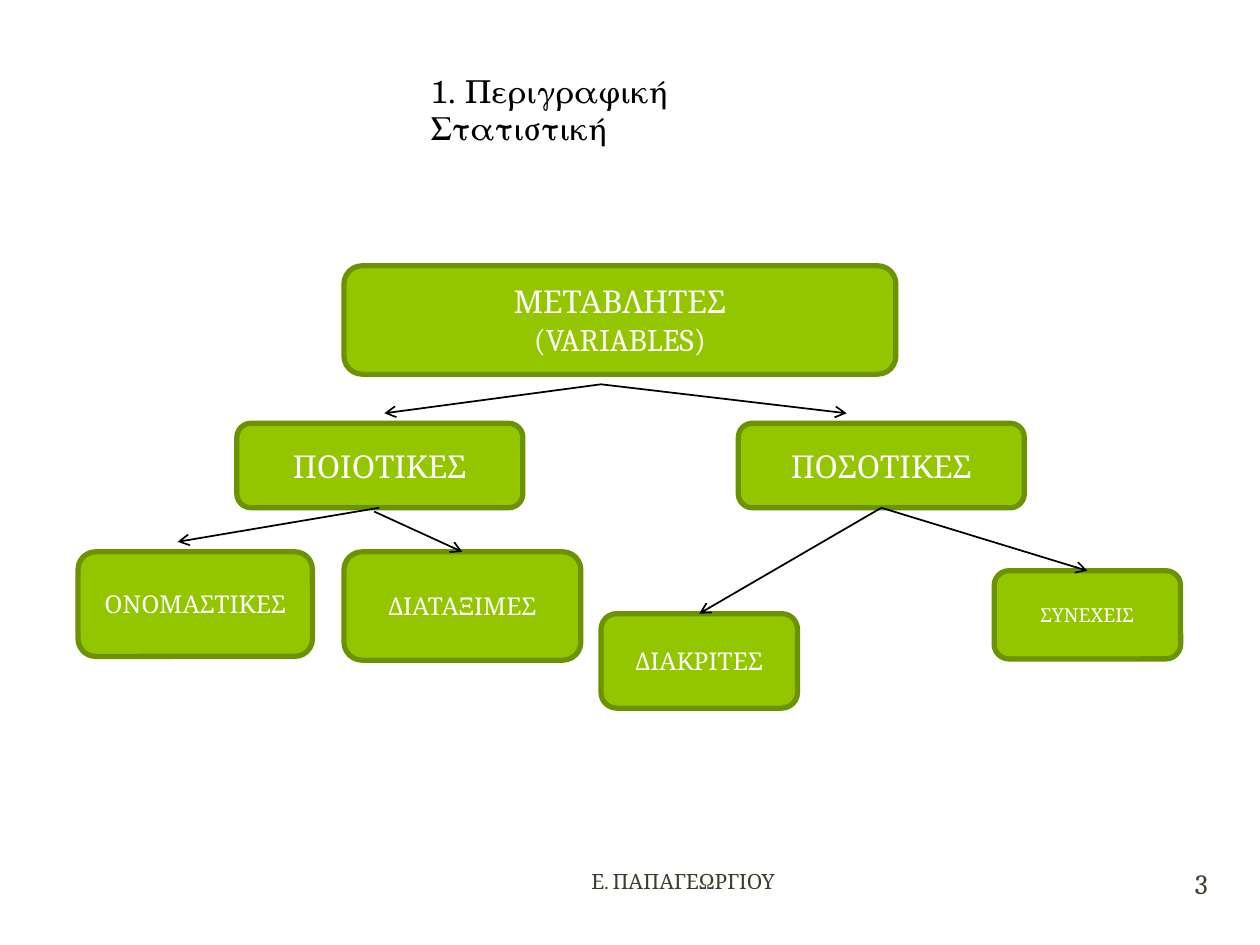
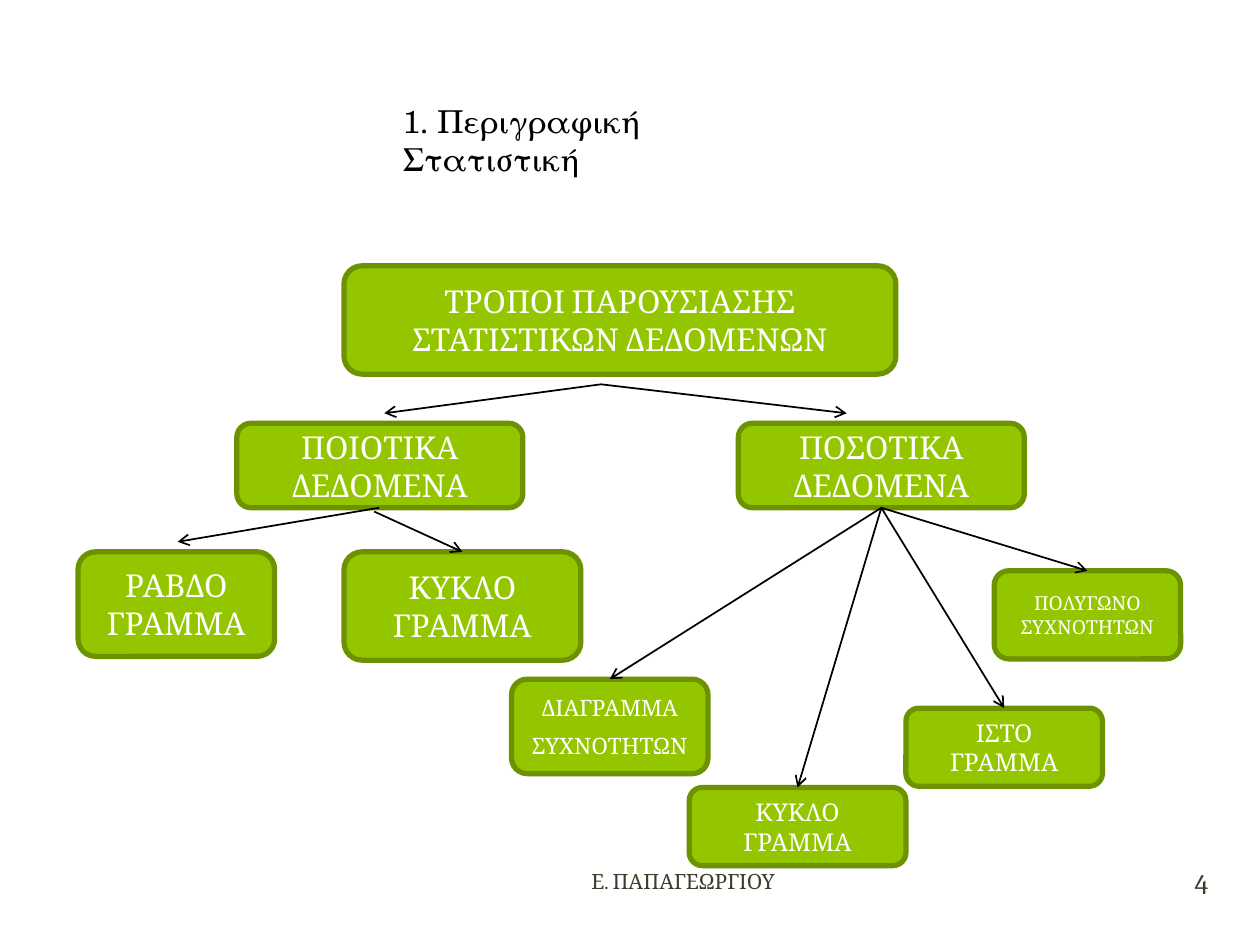
from lxml import etree
from pptx import Presentation
from pptx.dml.color import RGBColor
from pptx.enum import shapes, text
from pptx.oxml import ns
from pptx.util import Inches, Pt

TOP, BOTTOM = 0, 2


def color(hex_string):
    return RGBColor.from_string(hex_string)


class Deck:
    FILL, BORDER, LIGHT, DARK, MUTED = "94C600", "6D9200", "FFFFFF", "000000", "3E3D2D"
    BODY_FONT, TITLE_FONT = "Cambria", "TeX Gyre Schola"

    def __init__(self):
        self.presentation = Presentation()
        self.presentation.slide_width = Inches(10)
        self.presentation.slide_height = Inches(7.5)
        self.slide = None

    def add_slide(self):
        self.slide = self.presentation.slides.add_slide(self.presentation.slide_layouts[6])

    def style_text(self, shape, content, size, hex_color, align, font=BODY_FONT,
                   space_before=0):
        frame = shape.text_frame
        frame.word_wrap = True
        frame.text = content
        for paragraph in frame.paragraphs:
            paragraph.alignment = align
            paragraph.space_before = Pt(space_before)
            for run in paragraph.runs:
                run.font.size = Pt(size)
                run.font.name = font
                run.font.color.rgb = color(hex_color)
        return frame

    def node(self, content, left, top, width, height, size=18, space_before=0):
        shape = self.slide.shapes.add_shape(
            shapes.MSO_SHAPE.FLOWCHART_ALTERNATE_PROCESS,
            Inches(left), Inches(top), Inches(width), Inches(height))
        shape.shadow.inherit = False
        shape.fill.solid()
        shape.fill.fore_color.rgb = color(self.FILL)
        shape.line.color.rgb = color(self.BORDER)
        shape.line.width = Pt(3)
        frame = self.style_text(shape, content, size, self.LIGHT, text.PP_ALIGN.CENTER,
                                space_before=space_before)
        frame.vertical_anchor = text.MSO_ANCHOR.MIDDLE
        return shape

    def arrow(self, start, end):
        """Draw an arrow; each end is an (x, y) point or a node to join (bottom to top)."""
        points = [end_point if isinstance(end_point, tuple) else (0, 0)
                  for end_point in (start, end)]
        connector = self.slide.shapes.add_connector(
            shapes.MSO_CONNECTOR.STRAIGHT,
            *(Inches(value) for point in points for value in point))
        if not isinstance(start, tuple):
            connector.begin_connect(start, BOTTOM)
        if not isinstance(end, tuple):
            connector.end_connect(end, TOP)
        connector.line.color.rgb = color(self.DARK)
        connector.line.width = Pt(1)
        properties = connector._element.spPr
        line = properties.find(ns.qn("a:ln"))
        etree.SubElement(line, ns.qn("a:tailEnd"), type="arrow")
        etree.SubElement(properties, ns.qn("a:effectLst"))

    def label(self, content, left, top, width, height, size, hex_color, align,
              font=BODY_FONT, anchor=text.MSO_ANCHOR.MIDDLE):
        box = self.slide.shapes.add_textbox(
            Inches(left), Inches(top), Inches(width), Inches(height))
        frame = self.style_text(box, content, size, hex_color, align, font)
        frame.vertical_anchor = anchor
        return frame

    def title(self, left, top):
        self.label("1. Περιγραφική Στατιστική", left, top, 3.33, 0.4, 18, self.DARK,
                   text.PP_ALIGN.LEFT, self.TITLE_FONT, text.MSO_ANCHOR.TOP)

    def footer(self, number):
        self.label("Ε. ΠΑΠΑΓΕΩΡΓΙΟΥ", 2.33, 6.78, 3.92, 0.42, 12, self.MUTED,
                   text.PP_ALIGN.RIGHT)
        frame = self.label(str(number), 9.2, 6.76, 0.67, 0.5, 16, self.MUTED,
                           text.PP_ALIGN.CENTER)
        frame.margin_left = frame.margin_right = frame.margin_top = frame.margin_bottom = 0

    def tree(self, root, branches, qualitative_leaves, first_leaf_width, leaf_size,
             quantitative_leaves):
        """Draw a root, its two branches and their leaves; the last leaves are node arguments."""
        self.node(root, 2.73, 2.11, 4.38, 0.86)
        qualitative, quantitative = branches
        self.node(qualitative, 1.88, 3.36, 2.27, 0.67)
        quantitative_node = self.node(quantitative, 5.86, 3.36, 2.27, 0.67)
        for x in (3.05, 6.72):
            self.arrow((4.77, 3.05), (x, 3.28))

        first, second = qualitative_leaves
        self.node(first, 0.62, 4.38, first_leaf_width, 0.83, leaf_size)
        second_node = self.node(second, 2.73, 4.38, 1.88, 0.86, leaf_size)
        self.arrow((3.01, 4.03), (1.41, 4.3))
        self.arrow((2.97, 4.06), second_node)

        leaf_nodes = [self.node(*leaf) for leaf in quantitative_leaves]
        for leaf_node in leaf_nodes:
            self.arrow(quantitative_node, leaf_node)


def main():
    deck = Deck()
    continuous_place = (7.89, 4.53, 1.48, 0.7, 11)

    deck.add_slide()
    deck.tree("ΜΕΤΑΒΛΗΤΕΣ\n(VARIABLES)", ("ΠΟΙΟΤΙΚΕΣ", "ΠΟΣΟΤΙΚΕΣ"),
              ("ΟΝΟΜΑΣΤΙΚΕΣ", "ΔΙΑΤΑΞΙΜΕΣ"), 1.86, 14,
              [("ΔΙΑΚΡΙΤΕΣ", 4.77, 4.87, 1.56, 0.75, 14, 6),
               ("ΣΥΝΕΧΕΙΣ", *continuous_place)])
    deck.title(3.32, 0.52)
    deck.footer(3)

    deck.add_slide()
    deck.tree("ΤΡΟΠΟΙ ΠΑΡΟΥΣΙΑΣΗΣ ΣΤΑΤΙΣΤΙΚΩΝ ΔΕΔΟΜΕΝΩΝ",
              ("ΠΟΙΟΤΙΚΑ ΔΕΔΟΜΕΝΑ", "ΠΟΣΟΤΙΚΑ ΔΕΔΟΜΕΝΑ"),
              ("ΡΑΒΔΟ\nΓΡΑΜΜΑ", "ΚΥΚΛΟ\nΓΡΑΜΜΑ"), 1.56, 18,
              [("ΔΙΑΓΡΑΜΜΑ\nΣΥΧΝΟΤΗΤΩΝ", 4.06, 5.39, 1.56, 0.75, 12.9, 6),
               ("ΚΥΚΛΟ\nΓΡΑΜΜΑ", 5.47, 6.25, 1.72, 0.62, 14),
               ("ΙΣΤΟ\nΓΡΑΜΜΑ", 7.19, 5.62, 1.56, 0.62, 14),
               ("ΠΟΛΥΓΩΝΟ\nΣΥΧΝΟΤΗΤΩΝ", *continuous_place)])
    deck.title(3.1, 0.76)
    deck.footer(4)

    deck.presentation.save("out.pptx")


if __name__ == "__main__":
    main()
